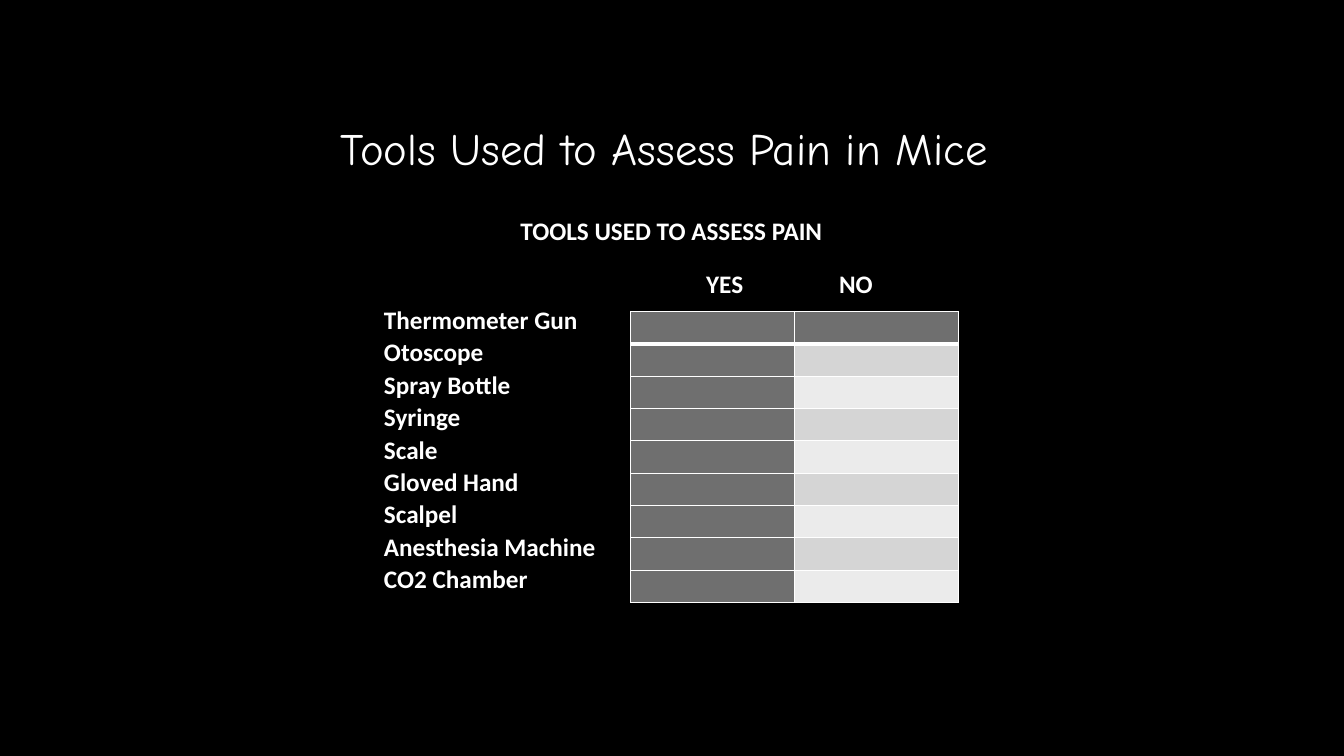
import dataclasses

import pptx
import pptx.dml.color
import pptx.enum.text
import pptx.oxml
import pptx.oxml.ns
import pptx.util

Pt = pptx.util.Pt
Align = pptx.enum.text.PP_ALIGN

TOOLS = [
    "Thermometer Gun", "Otoscope", "Spray Bottle", "Syringe", "Scale",
    "Gloved Hand", "Scalpel", "Anesthesia Machine", "CO2 Chamber",
]


@dataclasses.dataclass(frozen=True)
class Theme:
    background: str = "000000"
    text: str = "FFFFFF"
    rule: str = "FFFFFF"
    dark: str = "6F6F6F"
    bands: tuple = ("EBEBEB", "D5D5D5")
    title_font: str = "Comic Neue"
    body_font: str = "Calibri"
    title_size: float = 32
    body_size: float = 18


def rgb(color):
    return pptx.dml.color.RGBColor.from_string(color)


def apply(target, values):
    for name, value in values.items():
        setattr(target, name, value)


class PageBuilder:
    def __init__(self, page, theme):
        self.page = page
        self.theme = theme
        self.title_style = {"name": theme.title_font, "size": Pt(theme.title_size)}
        self.body_style = {"name": theme.body_font, "size": Pt(theme.body_size), "bold": True}
        fill = page.background.fill
        fill.solid()
        fill.fore_color.rgb = rgb(theme.background)

    def add_span(self, para, text, style, layout):
        span = para.add_run()
        span.text = text
        apply(span.font, style)
        span.font.color.rgb = rgb(self.theme.text)
        apply(para, layout)

    def text(self, bounds, text, style, layout):
        box = self.page.shapes.add_textbox(*map(Pt, bounds))
        box.text_frame.word_wrap = True
        para = box.text_frame.paragraphs[0]
        self.add_span(para, text, style, layout)
        return para

    def tab_stop(self, para, position):
        namespace = pptx.oxml.ns.nsdecls("a")
        tabs = pptx.oxml.parse_xml(
            f'<a:tabLst {namespace}><a:tab pos="{Pt(position)}" algn="l"/></a:tabLst>'
        )
        para._p.get_or_add_pPr().append(tabs)

    def table(self, bounds, rows, columns):
        table = self.page.shapes.add_table(rows, columns, *map(Pt, bounds)).table
        apply(table, {"first_row": False, "horz_banding": False})
        width, height = bounds[2:]
        for column in table.columns:
            column.width = Pt(width / columns)
        for row in table.rows:
            row.height = Pt(height / rows)
        return table

    def cell(self, cell, fill, rule, top=1, bottom=1, side=0):
        apply(cell, {
            "margin_left": Pt(side), "margin_right": Pt(side),
            "margin_top": 0, "margin_bottom": 0,
        })
        namespace = pptx.oxml.ns.nsdecls("a")
        properties = cell._tc.get_or_add_tcPr()
        for edge, width in {"L": 1, "R": 1, "T": top, "B": bottom}.items():
            properties.append(pptx.oxml.parse_xml(
                f'<a:ln{edge} {namespace} w="{Pt(width)}"><a:solidFill>'
                f'<a:srgbClr val="{rule}"/></a:solidFill></a:ln{edge}>'
            ))
        cell.fill.solid()
        cell.fill.fore_color.rgb = rgb(fill)

    def label_table(self, bounds, labels):
        table = self.table(bounds, len(labels), 1)
        color = self.theme.background
        for index, label in enumerate(labels):
            cell = table.cell(index, 0)
            self.cell(cell, color, color, side=5)
            para = cell.text_frame.paragraphs[0]
            self.add_span(para, label, self.body_style, {"line_spacing": 1.07})

    def answer_table(self, bounds, rows):
        table = self.table(bounds, rows, 2)
        theme = self.theme
        for index in range(rows):
            no_fill = theme.bands[index % 2] if index else theme.dark
            for column, fill in enumerate((theme.dark, no_fill)):
                self.cell(
                    table.cell(index, column), fill, theme.rule,
                    top=3 if index == 1 else 1, bottom=3 if index == 0 else 1,
                )


def main():
    deck = pptx.Presentation()
    apply(deck, {"slide_width": Pt(960), "slide_height": Pt(540)})
    page = deck.slides.add_slide(deck.slide_layouts[6])
    builder = PageBuilder(page, Theme())

    builder.text(
        (0, 82.8, 960, 88.5), "Tools Used to Assess Pain in Mice ",
        builder.title_style, {"alignment": Align.CENTER},
    )
    builder.text(
        (353.6, 149, 252, 31), "TOOLS USED TO ASSESS PAIN", builder.body_style,
        {"alignment": Align.CENTER, "line_spacing": 1.07, "space_after": Pt(8)},
    )
    builder.label_table((269.3, 216.7, 166.3, 208.1), TOOLS)
    builder.answer_table((450.5, 222.5, 234, 208.1), len(TOOLS))
    header = builder.text(
        (497.3, 188, 140.4, 29), "YES\tNO", builder.body_style, {"alignment": Align.LEFT}
    )
    builder.tab_stop(header, 95)

    deck.save("out.pptx")


if __name__ == "__main__":
    main()
